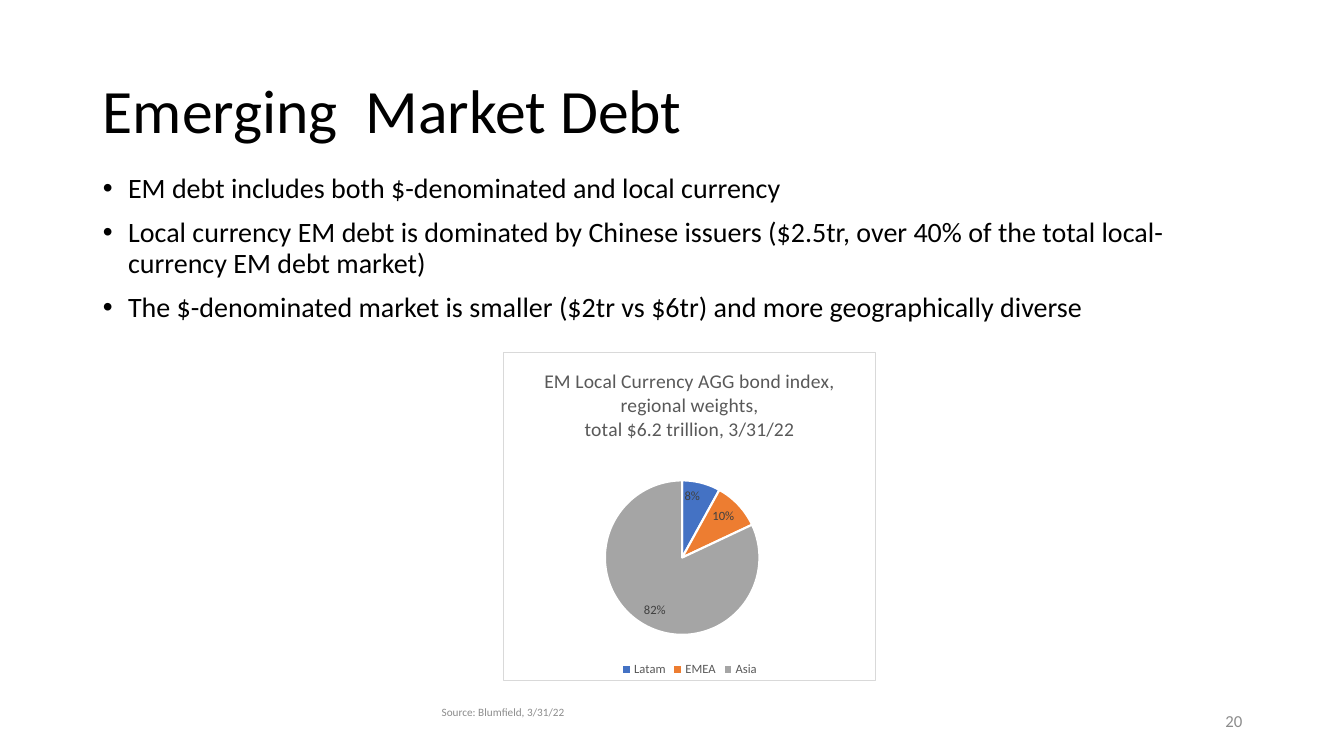
from pptx import Presentation
from pptx import util as u
from pptx.chart import data as cd
from pptx.dml.color import RGBColor
from pptx.enum import chart as ce, text
from pptx.oxml import parse_xml
from pptx.oxml.ns import nsdecls

FONT = "Calibri"
COLORS = {
    "text": "000000", "footer": "8C8C8C", "title": "595959", "label": "404040",
    "white": "FFFFFF", "border": "D9D9D9",
}
REGIONS = {
    "Latam": (0.08, "4472C4"),
    "EMEA": (0.10, "ED7D31"),
    "Asia": (0.82, "A5A5A5"),
}
BULLETS = [
    "EM debt includes both $-denominated and local currency",
    "Local currency EM debt is dominated by Chinese issuers ($2.5tr, over 40% "
    "of the total local-currency EM debt market)",
    "The $-denominated market is smaller ($2tr vs $6tr) and more geographically diverse",
]
CHART_TITLE = [
    "EM Local Currency AGG bond index, regional weights,",
    "total $6.2 trillion, 3/31/22",
    "",
]


def rgb(name):
    return RGBColor.from_string(COLORS.get(name, name))


def style_font(font, size, color):
    font.name, font.size, font.bold = FONT, u.Pt(size), False
    font.color.rgb = rgb(color)


def write(tf, lines, size=12, color="text", align=text.PP_ALIGN.LEFT,
          anchor=None, spacing=None, before=0, bullet=False):
    tf.word_wrap = True
    tf.auto_size = text.MSO_AUTO_SIZE.NONE
    if anchor is not None:
        tf.vertical_anchor = anchor
    for i, line in enumerate(lines):
        p = tf.paragraphs[0] if i == 0 else tf.add_paragraph()
        p.alignment, p.line_spacing, p.space_before = align, spacing, u.Pt(before)
        r = p.add_run()
        r.text = line
        style_font(r.font, size, color)
        if bullet:
            pPr = p._p.get_or_add_pPr()
            pPr.set("marL", str(u.Inches(0.25)))
            pPr.set("indent", str(u.Inches(-0.25)))
            pPr.append(parse_xml(f'<a:buFont {nsdecls("a")} typeface="Arial"/>'))
            pPr.append(parse_xml(f'<a:buChar {nsdecls("a")} char="•"/>'))


def place(sp, box):
    sp.left, sp.top, sp.width, sp.height = map(u.Inches, box)


def add_title(s, box):
    sp = s.shapes.title
    place(sp, box)
    write(sp.text_frame, ["Emerging  Market Debt"], size=44, spacing=0.9,
          anchor=text.MSO_ANCHOR.MIDDLE)


def add_body(s, box):
    sp = s.placeholders[1]
    place(sp, box)
    write(sp.text_frame, BULLETS, size=20, spacing=0.9, before=10, bullet=True,
          anchor=text.MSO_ANCHOR.TOP)


def add_footer(s, box, words, size, align):
    sp = s.shapes.add_textbox(*map(u.Inches, box))
    write(sp.text_frame, [words], size=size, color="footer", align=align,
          anchor=text.MSO_ANCHOR.MIDDLE)


def frame_chart(chart):
    space = chart.element
    body = space.find("{*}chart")
    body.addprevious(parse_xml(f'<c:roundedCorners {nsdecls("c")} val="0"/>'))
    body.addnext(parse_xml(
        f'<c:spPr {nsdecls("c", "a")}>'
        f'<a:solidFill><a:srgbClr val="{COLORS["white"]}"/></a:solidFill>'
        f'<a:ln w="{u.Pt(0.75)}"><a:solidFill><a:srgbClr val="{COLORS["border"]}"/>'
        '</a:solidFill></a:ln></c:spPr>'))


def lay_out_plot(chart, **area):
    plot_area = chart.element.find("{*}chart/{*}plotArea")
    for old in plot_area.findall("{*}layout"):
        plot_area.remove(old)
    modes = '<c:xMode val="edge"/><c:yMode val="edge"/>'
    sizes = "".join(f'<c:{key} val="{val}"/>' for key, val in area.items())
    plot_area.insert(0, parse_xml(
        f'<c:layout {nsdecls("c")}><c:manualLayout><c:layoutTarget val="inner"/>'
        f'{modes}{sizes}</c:manualLayout></c:layout>'))


def add_pie(s, box):
    data = cd.CategoryChartData(number_format="0%")
    data.categories = list(REGIONS)
    data.add_series("Series 1", [value for value, _ in REGIONS.values()])
    chart = s.shapes.add_chart(ce.XL_CHART_TYPE.PIE, *map(u.Inches, box), data).chart
    style_font(chart.font, 10, "text")
    frame_chart(chart)
    lay_out_plot(chart, x=0.27, y=0.39, w=0.42, h=0.47)

    chart.has_title = True
    write(chart.chart_title.text_frame, CHART_TITLE, size=14, color="title",
          align=text.PP_ALIGN.CENTER)
    chart.chart_title.include_in_layout = False
    chart.has_legend = True
    chart.legend.position = ce.XL_LEGEND_POSITION.BOTTOM
    chart.legend.include_in_layout = False
    style_font(chart.legend.font, 9, "title")

    plot = chart.plots[0]
    plot.vary_by_categories = True
    for i, (_, color) in enumerate(REGIONS.values()):
        fmt = plot.series[0].points[i].format
        fmt.fill.solid()
        fmt.fill.fore_color.rgb = rgb(color)
        fmt.line.color.rgb = rgb("white")
        fmt.line.width = u.Pt(1.5)
    labels = plot.series[0].data_labels
    labels.show_value = True
    labels.number_format, labels.number_format_is_linked = "0%", False
    labels.position = ce.XL_LABEL_POSITION.INSIDE_END
    style_font(labels.font, 9, "label")


def main():
    prs = Presentation()
    prs.slide_width, prs.slide_height = u.Inches(13.33), u.Inches(7.5)
    s = prs.slides.add_slide(prs.slide_layouts[1])
    add_title(s, (0.92, 0.4, 11.5, 1.45))
    add_body(s, (0.92, 1.68, 11.5, 5.07))
    add_pie(s, (4.99, 3.49, 3.7, 3.27))
    add_footer(s, (2.74, 6.95, 4.5, 0.22), "Source: Blumfield, 3/31/22", 8,
               text.PP_ALIGN.CENTER)
    add_footer(s, (9.42, 6.95, 3, 0.4), "20", 12, text.PP_ALIGN.RIGHT)
    prs.save("out.pptx")


if __name__ == "__main__":
    main()
